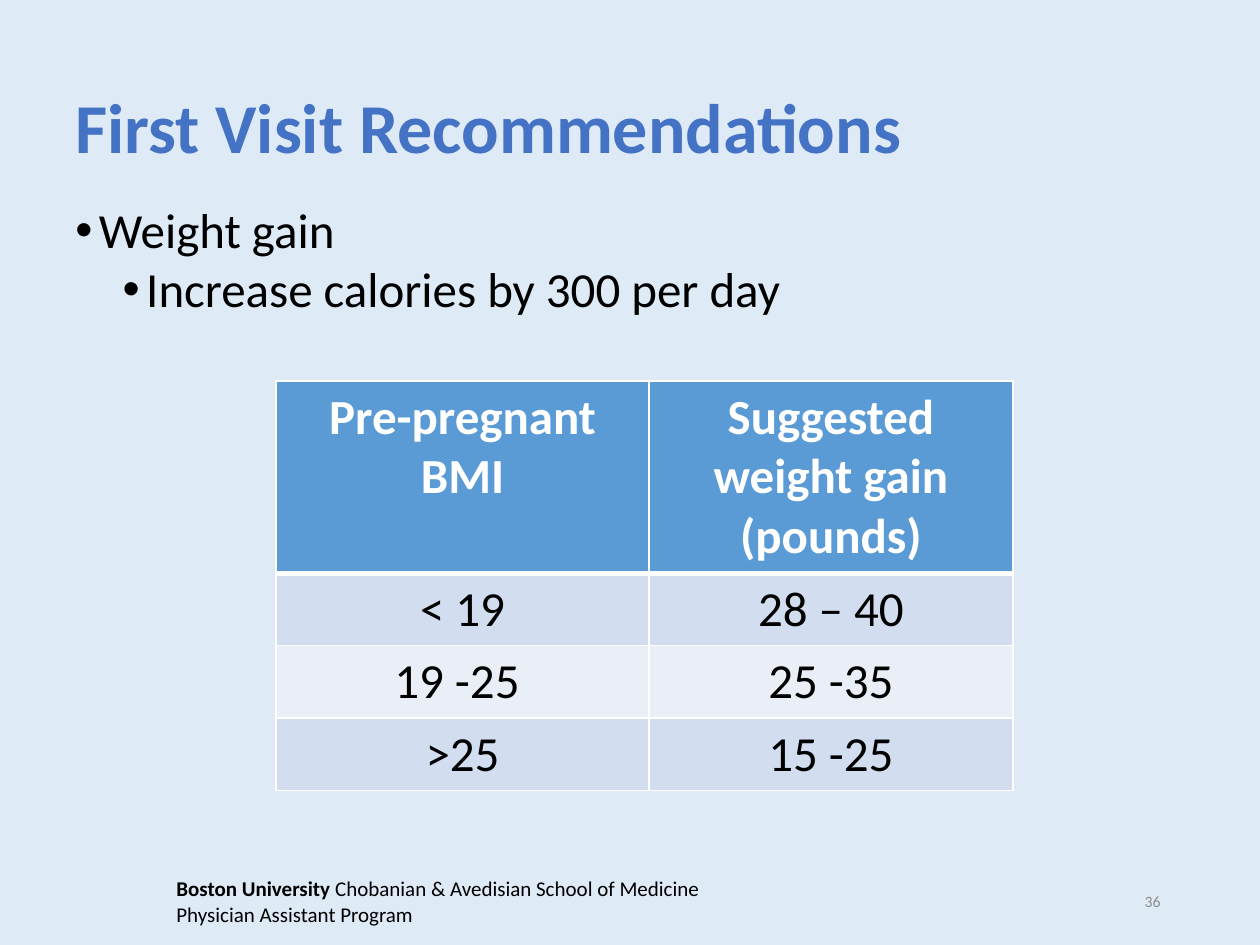
from lxml.etree import SubElement
from pptx import Presentation
from pptx.dml.color import RGBColor
from pptx.enum.text import MSO_ANCHOR, PP_ALIGN
from pptx.oxml.ns import qn
from pptx.util import Pt

FONT = "Calibri"
BLACK, WHITE = "000000", "FFFFFF"
HEADER_FILL = "5B9BD5"
BAND_FILLS = ("D2DEEF", "EAEFF7")


def color(hex_value):
    """Turn a hex string into a colour."""
    return RGBColor.from_string(hex_value)


def add_run(paragraph, text, size, hex_value, bold=False):
    """Append one formatted run."""
    run = paragraph.add_run()
    run.text = text
    run.font.name, run.font.size, run.font.bold = FONT, Pt(size), bold
    run.font.color.rgb = color(hex_value)


def add_frame(slide, box, anchor=MSO_ANCHOR.TOP, wrap=True):
    """Add a text box and return its text frame."""
    frame = slide.shapes.add_textbox(*map(Pt, box)).text_frame
    frame.word_wrap, frame.vertical_anchor = wrap, anchor
    return frame


def add_title(slide, box, text):
    """Place the slide heading."""
    heading = add_frame(slide, box, MSO_ANCHOR.MIDDLE).paragraphs[0]
    heading.line_spacing = 0.9
    add_run(heading, text, 40, "4472C4", True)


def add_bullets(slide, box, points):
    """Place bulleted points, each one level deeper than the last."""
    frame = add_frame(slide, box)
    for level, text in enumerate(points):
        point = frame.add_paragraph() if level else frame.paragraphs[0]
        point.level, point.line_spacing = level, 0.9
        point.space_before = Pt(3.8 if level else 0)
        properties = point._p.get_or_add_pPr()
        properties.set("marL", str(Pt(13.5 + 27 * level)))
        properties.set("indent", str(Pt(-13.5)))
        SubElement(properties, qn("a:buFont"), typeface="Arial")
        SubElement(properties, qn("a:buChar"), char="•")
        add_run(point, text, 28, BLACK)


def set_borders(cell, widths):
    """Draw white borders of the given widths, keyed by side."""
    properties = cell._tc.get_or_add_tcPr()
    for index, (side, width) in enumerate(widths.items()):
        line = properties.makeelement(qn(f"a:ln{side}"), {"w": str(Pt(width))})
        fill = SubElement(line, qn("a:solidFill"))
        SubElement(fill, qn("a:srgbClr"), val=WHITE)
        properties.insert(index, line)


def add_weight_table(slide, box, rows, column_widths, row_heights):
    """Place the weight gain table with a header and banded rows."""
    table = slide.shapes.add_table(
        len(rows), len(column_widths), *map(Pt, box)).table
    for column, width in zip(table.columns, column_widths):
        column.width = Pt(width)
    for row_index, (values, height) in enumerate(zip(rows, row_heights)):
        table.rows[row_index].height = Pt(height)
        header = row_index == 0
        fill = HEADER_FILL if header else BAND_FILLS[(row_index - 1) % 2]
        widths = {"L": 1, "R": 1, "T": 3 if row_index == 1 else 1,
                  "B": 3 if header else 1}
        for column_index, text in enumerate(values):
            cell = table.cell(row_index, column_index)
            cell.fill.solid()
            cell.fill.fore_color.rgb = color(fill)
            set_borders(cell, widths)
            entry = cell.text_frame.paragraphs[0]
            entry.alignment = PP_ALIGN.CENTER
            add_run(entry, text, 28, WHITE if header else BLACK, header)


def add_footer(slide, box, number):
    """Place the school name and the slide number."""
    left, top, width, height = box
    school_frame = add_frame(slide, (left, top, 319, height), wrap=False)
    school = school_frame.paragraphs[0]
    add_run(school, "Boston University", 12, BLACK, True)
    add_run(school, " Chobanian & Avedisian School of Medicine", 12, BLACK)
    add_run(school_frame.add_paragraph(), "Physician Assistant Program", 12, BLACK)
    number_box = (left + width - 162, top + 3.5, 162, 29)
    page = add_frame(slide, number_box, MSO_ANCHOR.MIDDLE).paragraphs[0]
    page.alignment = PP_ALIGN.RIGHT
    add_run(page, number, 9, "8C8C8C")


def main():
    """Build and save the slide."""
    deck = Presentation()
    deck.slide_width, deck.slide_height = Pt(720), Pt(540)
    slide = deck.slides.add_slide(deck.slide_layouts[6])
    slide.background.fill.solid()
    slide.background.fill.fore_color.rgb = color("DEEBF7")
    add_footer(slide, (93.75, 497, 576.5, 36), "36")
    add_title(slide, (36, 30, 648, 90), "First Visit Recommendations")
    add_bullets(slide, (36, 114, 648, 356),
                ("Weight gain", "Increase calories by 300 per day"))
    rows = (
        ("Pre-pregnant BMI", "Suggested weight gain (pounds)"),
        ("< 19", "28 – 40"),
        ("19 -25 ", "25 -35"),
        (">25", "15 -25"),
    )
    add_weight_table(slide, (157.8, 217.8, 421, 234), rows,
                     (213, 208), (109.8, 41.4, 41.4, 41.4))
    deck.save("out.pptx")


if __name__ == "__main__":
    main()
